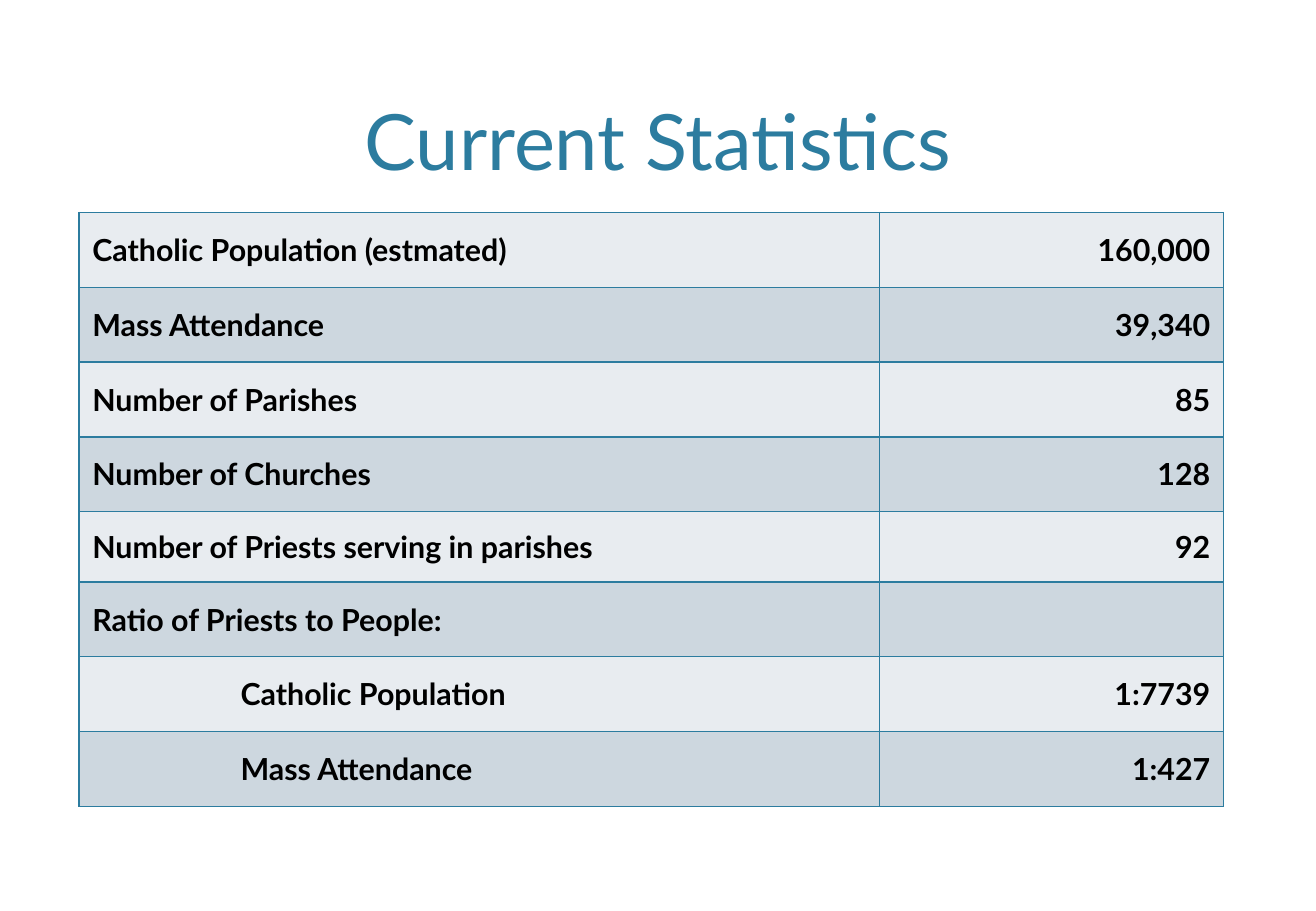
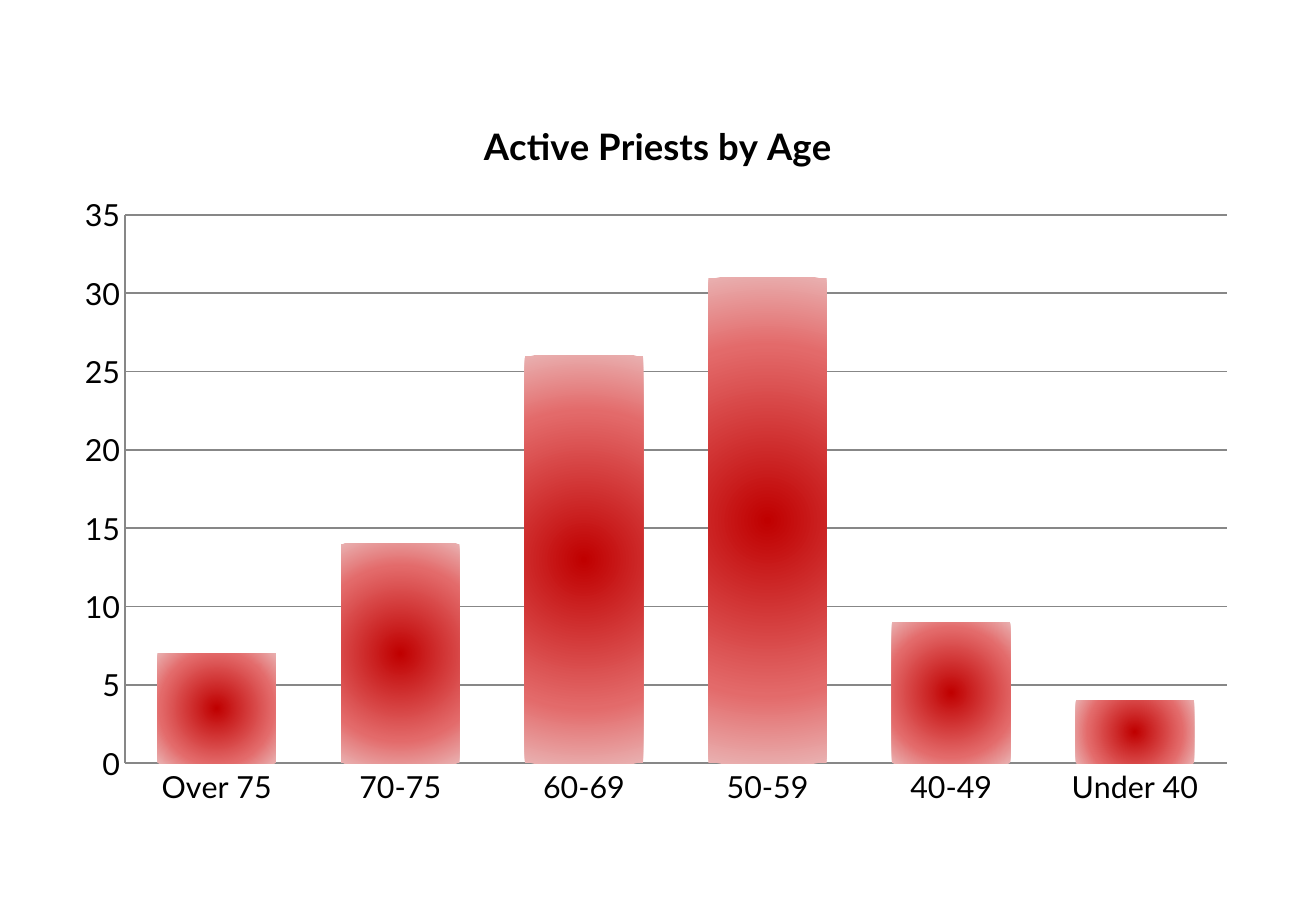
from dataclasses import dataclass

from lxml.etree import SubElement
from pptx import Presentation
from pptx.chart.data import CategoryChartData
from pptx.dml.color import RGBColor
from pptx.enum.chart import XL_CHART_TYPE, XL_TICK_MARK
from pptx.enum.text import MSO_ANCHOR, PP_ALIGN
from pptx.oxml import parse_xml
from pptx.oxml.ns import nsdecls, qn
from pptx.util import Inches, Pt


@dataclass(frozen=True)
class Theme:
    font: str = "Lato"
    accent: str = "2C7C9F"
    ink: str = "000000"
    axis: str = "878787"
    bands: tuple = ("E8ECF0", "CDD7DF")
    bar_stops: tuple = ((0, "C00000"), (70, "E36A6A"), (100, "E9B0B0"))
    title_size: float = 46
    chart_title_size: float = 21.6
    body_size: float = 18
    line: float = 1


THEME = Theme()

TITLE = "Current Statistics"
STATISTICS = [
    ("Catholic Population (estmated)", "160,000", 0),
    ("Mass Attendance", "39,340", 0),
    ("Number of Parishes", "85", 0),
    ("Number of Churches", "128", 0),
    ("Number of Priests serving in parishes", "92", 0),
    ("Ratio of Priests to People:", "", 0),
    ("Catholic Population", "1:7739", 1),
    ("Mass Attendance", "1:427", 1),
]
SHORT_ROW = 4
SHORT_HEIGHT = 0.58
COLUMNS = (6.59, 2.83)
TABLE_HEIGHT = 4.89
INDENT = 1.22

AGE_TITLE = "Active Priests by Age"
PRIESTS_BY_AGE = {
    "Over 75": 7, "70-75": 14, "60-69": 26,
    "50-59": 31, "40-49": 9, "Under 40": 4,
}
PLOT_AREA = {"x": 0.05, "y": 0.17, "w": 0.93, "h": 0.76}


def style_font(font, size=THEME.body_size, color=THEME.ink, bold=False):
    font.name = THEME.font
    font.size = Pt(size)
    font.bold = bold
    font.color.rgb = RGBColor.from_string(color)


def write(frame, text, align=PP_ALIGN.LEFT, **style):
    paragraph = frame.paragraphs[0]
    paragraph.alignment = align
    run = paragraph.add_run()
    run.text = text
    style_font(run.font, **style)


def add_borders(cell):
    properties = cell._tc.get_or_add_tcPr()
    for position, side in enumerate(("lnL", "lnR", "lnT", "lnB")):
        properties.insert(position, parse_xml(
            f'<a:{side} {nsdecls("a")} w="{Pt(THEME.line)}"><a:solidFill>'
            f'<a:srgbClr val="{THEME.accent}"/></a:solidFill></a:{side}>'))


def fill_cell(cell, text, band, align, indent=0):
    cell.fill.solid()
    cell.fill.fore_color.rgb = RGBColor.from_string(band)
    cell.vertical_anchor = MSO_ANCHOR.MIDDLE
    cell.margin_left = Inches(0.11 + indent * INDENT)
    cell.margin_right = Inches(0.11)
    cell.margin_top = cell.margin_bottom = Inches(0.05)
    write(cell.text_frame, text, align=align, bold=True)
    add_borders(cell)


def add_statistics(deck):
    slide = deck.slides.add_slide(deck.slide_layouts[5])
    title = slide.shapes.title
    title.left, title.top = Inches(0.65), Inches(0.12)
    title.width, title.height = Inches(9.53), Inches(1.46)
    title.text_frame.vertical_anchor = MSO_ANCHOR.BOTTOM
    write(title.text_frame, TITLE, align=PP_ALIGN.CENTER,
          size=THEME.title_size, color=THEME.accent)

    table = slide.shapes.add_table(
        len(STATISTICS), len(COLUMNS), Inches(0.65), Inches(1.75),
        Inches(sum(COLUMNS)), Inches(TABLE_HEIGHT)).table
    for column, width in zip(table.columns, COLUMNS):
        column.width = Inches(width)
    row_height = (TABLE_HEIGHT - SHORT_HEIGHT) / (len(STATISTICS) - 1)
    for index, (label, value, indent) in enumerate(STATISTICS):
        table.rows[index].height = Inches(
            SHORT_HEIGHT if index == SHORT_ROW else row_height)
        band = THEME.bands[index % 2]
        fill_cell(table.cell(index, 0), label, band, PP_ALIGN.LEFT, indent)
        fill_cell(table.cell(index, 1), value, band, PP_ALIGN.RIGHT)


def fill_bars(series):
    stops = "".join(
        f'<a:gs pos="{position * 1000}"><a:srgbClr val="{color}"/></a:gs>'
        for position, color in THEME.bar_stops)
    series._element.get_or_add_spPr().insert(0, parse_xml(
        f'<a:gradFill {nsdecls("a")} rotWithShape="1"><a:gsLst>{stops}</a:gsLst>'
        '<a:path path="circle"><a:fillToRect l="50000" t="50000" r="50000" '
        'b="50000"/></a:path></a:gradFill>'))


def place_plot(chart):
    plot_area = chart._chartSpace.chart.plotArea
    layout = plot_area.find(qn("c:layout"))
    if layout is None:
        layout = parse_xml(f'<c:layout {nsdecls("c")}/>')
        plot_area.insert(0, layout)
    manual = SubElement(layout, qn("c:manualLayout"))
    settings = {"layoutTarget": "inner", "xMode": "edge", "yMode": "edge", **PLOT_AREA}
    for tag, value in settings.items():
        SubElement(manual, qn(f"c:{tag}")).set("val", str(value))


def add_ages(deck):
    slide = deck.slides.add_slide(deck.slide_layouts[6])
    ages = CategoryChartData()
    ages.categories = list(PRIESTS_BY_AGE)
    ages.add_series("Series 1", list(PRIESTS_BY_AGE.values()))
    chart = slide.shapes.add_chart(
        XL_CHART_TYPE.COLUMN_STACKED, Inches(0.54), Inches(0.76),
        Inches(9.75), Inches(5.94), ages).chart
    style_font(chart.font)
    chart.has_legend = False
    chart.has_title = True
    write(chart.chart_title.text_frame, AGE_TITLE, align=PP_ALIGN.CENTER,
          size=THEME.chart_title_size, bold=True)
    chart.chart_title.include_in_layout = False

    bars = chart.plots[0]
    bars.gap_width, bars.overlap = 55, 100
    bars.vary_by_categories = False
    fill_bars(bars.series[0])

    counts = chart.value_axis
    counts.minimum_scale, counts.maximum_scale, counts.major_unit = 0, 35, 5
    counts.has_major_gridlines = True
    for axis in (chart.category_axis, counts):
        axis.major_tick_mark = axis.minor_tick_mark = XL_TICK_MARK.NONE
    for line in (chart.category_axis.format.line, counts.format.line,
                 counts.major_gridlines.format.line):
        line.width = Pt(THEME.line)
        line.color.rgb = RGBColor.from_string(THEME.axis)
    place_plot(chart)


def main():
    deck = Presentation()
    deck.slide_width, deck.slide_height = Inches(10.83), Inches(7.5)
    add_statistics(deck)
    add_ages(deck)
    deck.save("out.pptx")


if __name__ == "__main__":
    main()
